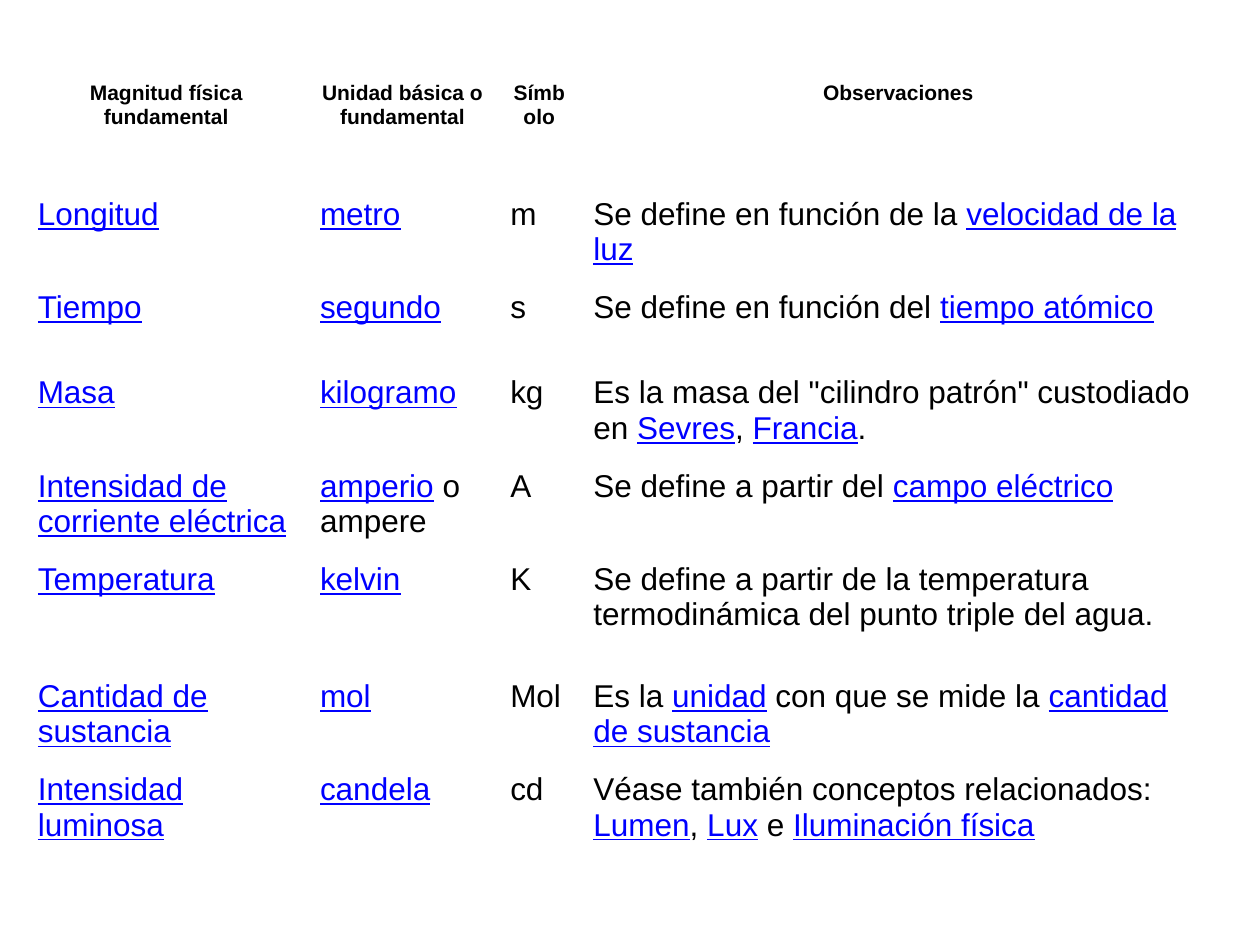
from pptx import Presentation
from pptx.dml.color import RGBColor
from pptx.enum.text import PP_ALIGN as Align
from pptx.util import Inches, Pt

COLUMNS = [2.24, 1.51, 0.66, 5.04]
ROWS = [0.91, 0.74, 0.68, 0.74, 0.74, 0.93, 0.74, 0.98]
LINK_MARK = "|"

HEADINGS = [
    "Magnitud física fundamental",
    "Unidad básica o fundamental",
    "Símbolo",
    "Observaciones",
]
UNITS = [
    ["|Longitud|", "|metro|", "m",
     "Se define en función de la |velocidad de la luz|"],
    ["|Tiempo|", "|segundo|", "s",
     "Se define en función del |tiempo atómico|"],
    ["|Masa|", "|kilogramo|", "kg",
     'Es la masa del "cilindro patrón" custodiado en |Sevres|, |Francia|.'],
    ["|Intensidad de corriente eléctrica|", "|amperio| o ampere", "A",
     "Se define a partir del |campo eléctrico|"],
    ["|Temperatura|", "|kelvin|", "K",
     "Se define a partir de la temperatura termodinámica del punto triple del agua."],
    ["|Cantidad de sustancia|", "|mol|", "Mol",
     "Es la |unidad| con que se mide la |cantidad de sustancia|"],
    ["|Intensidad luminosa|", "|candela|", "cd",
     "Véase también conceptos relacionados: |Lumen|, |Lux| e |Iluminación física|"],
]

HEADING_FORMAT = {"name": "Arial", "size": Pt(12), "bold": True}
BODY_FORMAT = {"name": "Arial", "size": Pt(18), "bold": False}


def paint(target, colour):
    target.rgb = RGBColor.from_string(colour)


def add_span(para, text, font_format, linked):
    span = para.add_run()
    span.text = text
    for name, value in {**font_format, "underline": linked}.items():
        setattr(span.font, name, value)
    paint(span.font.color, "0000FF" if linked else "000000")


def fill_cell(cell, text, font_format, align):
    cell.fill.background()
    para = cell.text_frame.paragraphs[0]
    para.alignment = align
    for index, part in enumerate(text.split(LINK_MARK)):
        if part:
            add_span(para, part, font_format, index % 2 == 1)


def add_units_table(page):
    frame = page.shapes.add_table(
        len(ROWS), len(COLUMNS), Inches(0.2), Inches(0.6),
        Inches(sum(COLUMNS)), Inches(sum(ROWS)))
    table = frame.table
    for name in ("first_row", "horz_banding"):
        setattr(table, name, False)
    for column, width in zip(table.columns, COLUMNS):
        column.width = Inches(width)
    for row, height in zip(table.rows, ROWS):
        row.height = Inches(height)
    for row_index, texts in enumerate([HEADINGS, *UNITS]):
        heading = row_index == 0
        font_format = HEADING_FORMAT if heading else BODY_FORMAT
        align = Align.CENTER if heading else Align.LEFT
        for column_index, text in enumerate(texts):
            fill_cell(table.cell(row_index, column_index), text, font_format, align)


def main():
    deck = Presentation()
    deck.slide_width, deck.slide_height = Inches(10), Inches(7.5)
    page = deck.slides.add_slide(deck.slide_layouts[6])
    page.background.fill.solid()
    paint(page.background.fill.fore_color, "FFFFFF")
    add_units_table(page)
    deck.save("out.pptx")


if __name__ == "__main__":
    main()
